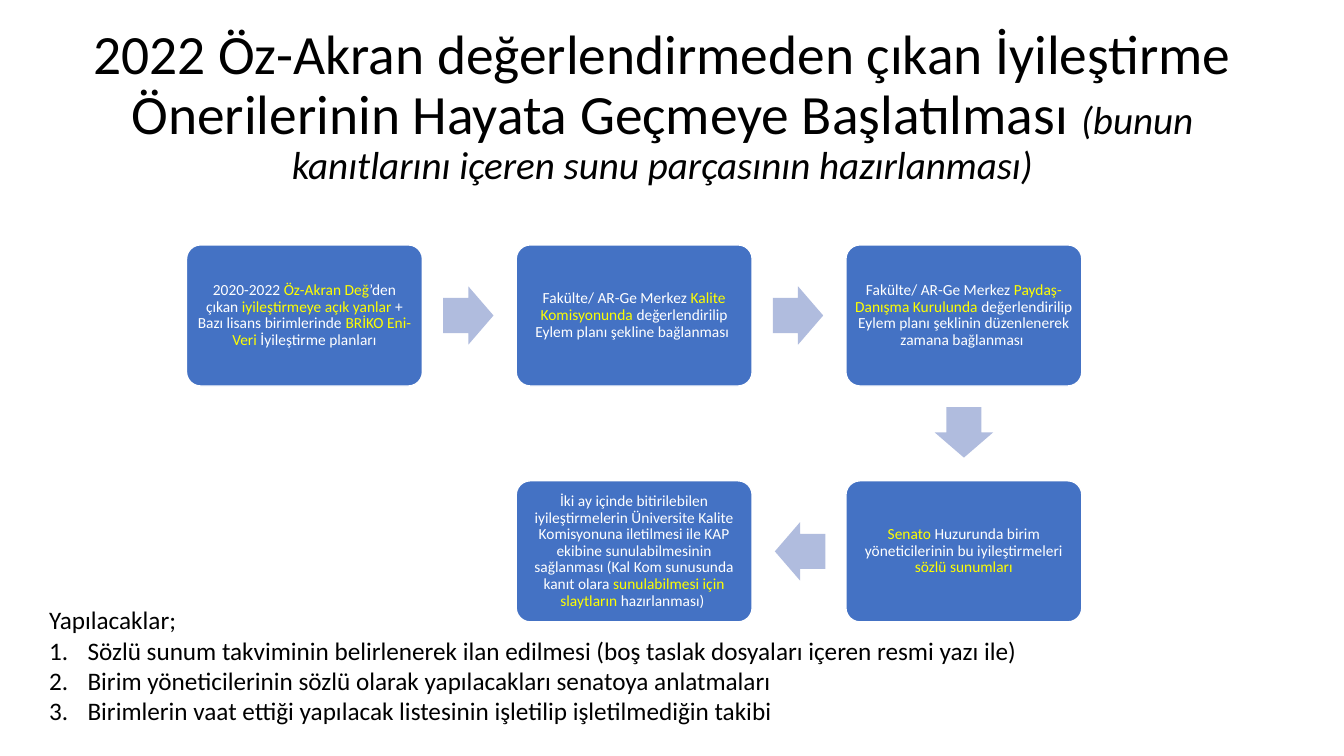
import math

import lxml.etree
import pptx
import pptx.dml.color
import pptx.enum.shapes
import pptx.enum.text
import pptx.oxml.ns
import pptx.util

# Content: "plain" and "accent" name the text colour of each run in a step.
TITLE = [
    ("2022 Öz-Akran değerlendirmeden çıkan İyileştirme Önerilerinin Hayata Geçmeye Başlatılması ", "title"),
    ("(bunun kanıtlarını içeren sunu parçasının hazırlanması)", "subtitle"),
]
# Each step: (column, row) in the flow grid, then its runs.
STEPS = [
    ((0, 0), [("2020-2022 ", "plain"), ("Öz-Akran Değ", "accent"), ("’den çıkan ", "plain"),
              ("iyileştirmeye açık yanlar ", "accent"), ("+ Bazı lisans birimlerinde ", "plain"),
              ("BRİKO Eni-Veri", "accent"), (" İyileştirme planları", "plain")]),
    ((1, 0), [("Fakülte/ AR-Ge Merkez ", "plain"), ("Kalite Komisyonunda ", "accent"),
              ("değerlendirilip Eylem planı şekline bağlanması ", "plain")]),
    ((2, 0), [("Fakülte/ AR-Ge Merkez ", "plain"), ("Paydaş-Danışma Kurulunda ", "accent"),
              ("değerlendirilip Eylem planı şeklinin düzenlenerek zamana bağlanması ", "plain")]),
    ((2, 1), [("Senato", "accent"), (" Huzurunda birim yöneticilerinin bu iyileştirmeleri ", "plain"),
              ("sözlü sunumları", "accent")]),
    ((1, 1), [("İki ay içinde bitirilebilen iyileştirmelerin Üniversite Kalite Komisyonuna iletilmesi ile KAP "
               "ekibine sunulabilmesinin sağlanması (Kal Kom sunusunda kanıt olara ", "plain"),
              ("sunulabilmesi için slaytların ", "accent"), ("hazırlanması) ", "plain")]),
]
TASKS_HEADING = "Yapılacaklar;"
TASKS = [
    "Sözlü sunum takviminin belirlenerek ilan edilmesi (boş taslak dosyaları içeren resmi yazı ile)",
    "Birim yöneticilerinin sözlü olarak yapılacakları senatoya anlatmaları",
    "Birimlerin vaat ettiği yapılacak listesinin işletilip işletilmediğin takibi",
]

THEME = {
    "font": "Calibri",
    "box": "4472C4",
    "box_line": "FFFFFF",
    "arrow": "B0BCDE",
    "runs": {
        "title": {"size": 39.6, "color": "000000"},
        "subtitle": {"size": 27.9, "color": "000000", "italic": True},
        "plain": {"size": 11, "color": "FFFFFF"},
        "accent": {"size": 11, "color": "FFFF00"},
        "task": {"size": 18, "color": "000000"},
    },
}

# Lengths in px, 100 px to the inch.
EMU_PER_PX = 9144
SLIDE_SIZE = (1333, 750)
TITLE_FRAME = (60, 24, 1194, 165)
TASKS_FRAME = (39, 595, 1236, 131)
GRID_ORIGIN = (185, 243)
GRID_PITCH = (327, 234)
BOX_SIZE = (234, 140)
BOX_INSET = 5
ARROW_SIZE = (50, 58)
ARROW_SETBACK = 1
TASK_INDENT = 38

MSO_SHAPE = pptx.enum.shapes.MSO_SHAPE
CENTER = pptx.enum.text.PP_ALIGN.CENTER
MIDDLE = pptx.enum.text.MSO_ANCHOR.MIDDLE


def px(*lengths):
    return [pptx.util.Emu(round(length * EMU_PER_PX)) for length in lengths]


def rgb(value):
    return pptx.dml.color.RGBColor.from_string(value)


def add_runs(paragraph, runs):
    for text, style_name in runs:
        style = THEME["runs"][style_name]
        run = paragraph.add_run()
        run.text = text
        run.font.color.rgb = rgb(style["color"])
        formats = {"name": THEME["font"], "size": pptx.util.Pt(style["size"]),
                   "italic": style.get("italic")}
        for attribute, value in formats.items():
            setattr(run.font, attribute, value)


def fill_centered(shape, runs):
    shape.text_frame.word_wrap = True
    shape.text_frame.vertical_anchor = MIDDLE
    paragraph = shape.text_frame.paragraphs[0]
    for attribute, value in {"alignment": CENTER, "line_spacing": 0.9}.items():
        setattr(paragraph, attribute, value)
    add_runs(paragraph, runs)


def add_flat_shape(slide, kind, frame, fill, adjustments):
    shape = slide.shapes.add_shape(kind, *px(*frame))
    shape.shadow.inherit = False
    shape.fill.solid()
    shape.fill.fore_color.rgb = rgb(fill)
    for index, value in enumerate(adjustments):
        shape.adjustments[index] = value
    return shape


def box_frame(cell):
    return [start + index * pitch for start, index, pitch in zip(GRID_ORIGIN, cell, GRID_PITCH)] + list(BOX_SIZE)


def add_step(slide, cell, runs):
    box = add_flat_shape(slide, MSO_SHAPE.ROUNDED_RECTANGLE, box_frame(cell), THEME["box"], [0.1])
    box.line.color.rgb = rgb(THEME["box_line"])
    box.line.width = pptx.util.Pt(1)
    for side in ("left", "top", "right", "bottom"):
        setattr(box.text_frame, f"margin_{side}", px(BOX_INSET)[0])
    fill_centered(box, runs)


def add_arrow(slide, source, target):
    """Place an arrow midway between two grid cells, turned towards the target."""
    centers = [(left + width / 2, top + height / 2)
               for left, top, width, height in map(box_frame, (source, target))]
    (x1, y1), (x2, y2) = centers
    angle = math.atan2(y2 - y1, x2 - x1)
    center_x = (x1 + x2) / 2 - ARROW_SETBACK * math.cos(angle)
    center_y = (y1 + y2) / 2 - ARROW_SETBACK * math.sin(angle)
    width, height = ARROW_SIZE
    frame = (center_x - width / 2, center_y - height / 2, width, height)
    arrow = add_flat_shape(slide, MSO_SHAPE.RIGHT_ARROW, frame, THEME["arrow"], [0.6, 0.5])
    arrow.line.fill.background()
    arrow.rotation = math.degrees(angle)


def number_paragraph(paragraph):
    properties = paragraph._p.get_or_add_pPr()
    indent = px(TASK_INDENT)[0]
    properties.set("marL", str(indent))
    properties.set("indent", str(-indent))
    numbering = lxml.etree.SubElement(properties, pptx.oxml.ns.qn("a:buAutoNum"))
    numbering.set("type", "arabicPeriod")


def add_tasks(slide):
    text_frame = slide.shapes.add_textbox(*px(*TASKS_FRAME)).text_frame
    text_frame.word_wrap = True
    add_runs(text_frame.paragraphs[0], [(TASKS_HEADING, "task")])
    for task in TASKS:
        paragraph = text_frame.add_paragraph()
        number_paragraph(paragraph)
        add_runs(paragraph, [(task, "task")])


def main():
    presentation = pptx.Presentation()
    presentation.slide_width, presentation.slide_height = px(*SLIDE_SIZE)
    slide = presentation.slides.add_slide(presentation.slide_layouts[6])

    fill_centered(slide.shapes.add_textbox(*px(*TITLE_FRAME)), TITLE)
    for cell, runs in STEPS:
        add_step(slide, cell, runs)
    cells = [cell for cell, _ in STEPS]
    for source, target in zip(cells, cells[1:]):
        add_arrow(slide, source, target)
    add_tasks(slide)

    presentation.save("out.pptx")


if __name__ == "__main__":
    main()
